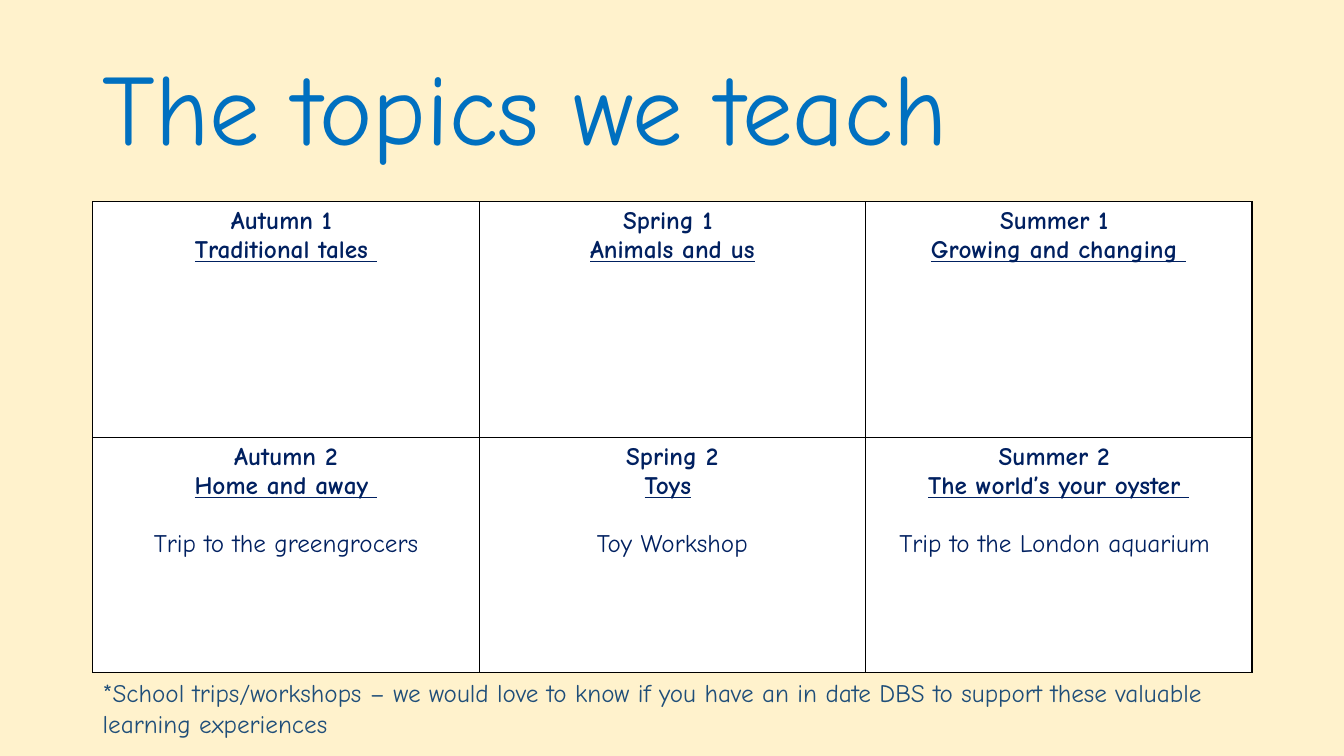
from lxml.etree import SubElement as Sub
from pptx import Presentation
from pptx.dml.color import RGBColor
from pptx.enum.text import MSO_ANCHOR as Anchor, MSO_AUTO_SIZE as Fit, PP_ALIGN as Align
from pptx.oxml.ns import qn
from pptx.util import Inches, Pt

TERMS = [
    [
        ("Autumn 1 ", "Traditional tales ", "", ""),
        ("Spring 1 ", "Animals and us", "", ""),
        ("Summer 1 ", "Growing and changing ", "", ""),
    ],
    [
        ("Autumn 2", "Home and away ", "", "Trip to the greengrocers"),
        ("Spring 2", "Toys", " ", "Toy Workshop"),
        ("Summer 2 ", "The world’s your oyster ", "", "Trip to the London aquarium "),
    ],
]
NOTE = (
    "*School trips/workshops – we would love to know if you have an in date DBS "
    "to support these valuable learning experiences"
)


def tint(code):
    return RGBColor.from_string(code)


class Deck:
    face = "Comic Neue"
    blue, navy, steel = "0070C0", "002060", "1F4E79"
    cream, white, black = "FFF2CC", "FFFFFF", "000000"
    size = 18
    gap = 21
    left, wide = 0.069, 0.8625

    def __init__(self):
        self.prs = Presentation()
        self.prs.slide_width = Inches(13.33)
        self.prs.slide_height = Inches(7.5)
        self.slide = self.prs.slides.add_slide(self.prs.slide_layouts[5])
        fill = self.slide.background.fill
        fill.solid()
        fill.fore_color.rgb = tint(self.cream)

    def area(self, top, high):
        w, h = self.prs.slide_width, self.prs.slide_height
        return int(self.left * w), int(top * h), int(self.wide * w), int(high * h)

    def style(self, para, color, size=size, bold=False, line=False):
        font = para.font
        font.name, font.size = self.face, Pt(size)
        font.bold, font.underline = bold, line
        font.color.rgb = tint(color)

    def title(self, text, top, high):
        box = self.slide.shapes.title
        box.left, box.top, box.width, box.height = self.area(top, high)
        frame = box.text_frame
        frame.text = text
        frame.auto_size = Fit.NONE
        frame.vertical_anchor = Anchor.MIDDLE
        para = frame.paragraphs[0]
        para.alignment = Align.LEFT
        para.line_spacing = 0.9
        self.style(para, self.blue, 72)

    def edge(self, cell):
        props = cell._tc.get_or_add_tcPr()
        for spot, side in enumerate(("lnL", "lnR", "lnT", "lnB")):
            line = props.makeelement(qn("a:" + side), {"w": str(Pt(1))})
            props.insert(spot, line)
            fill = Sub(line, qn("a:solidFill"))
            Sub(fill, qn("a:srgbClr"), val=self.black)

    def cell(self, cell, term, topic, tail, trip):
        cell.fill.solid()
        cell.fill.fore_color.rgb = tint(self.white)
        self.edge(cell)
        frame = cell.text_frame
        frame.text = "\n".join(filter(None, (term, topic, trip)))
        for row, para in enumerate(frame.paragraphs):
            para.alignment = Align.CENTER
            if row == 2:
                para.space_before = Pt(self.gap)
            self.style(para, self.navy, bold=row < 2, line=row == 1)
        if tail:
            run = frame.paragraphs[1].add_run()
            run.text = tail
            run.font.underline = False

    def table(self, rows, top, high):
        grid = self.slide.shapes.add_table(len(rows), len(rows[0]), *self.area(top, high)).table
        grid.first_row = grid.horz_banding = False
        for r, row in enumerate(rows):
            for c, item in enumerate(row):
                self.cell(grid.cell(r, c), *item)

    def note(self, text, top, high):
        frame = self.slide.shapes.add_textbox(*self.area(top, high)).text_frame
        frame.word_wrap = True
        frame.auto_size = Fit.SHAPE_TO_FIT_TEXT
        frame.text = text
        self.style(frame.paragraphs[0], self.steel)

    def save(self):
        self.prs.save("out.pptx")


def main():
    deck = Deck()
    deck.title("The topics we teach", 0.053, 0.193)
    deck.table(TERMS, 0.267, 0.623)
    deck.note(NOTE, 0.89, 0.095)
    deck.save()


if __name__ == "__main__":
    main()
